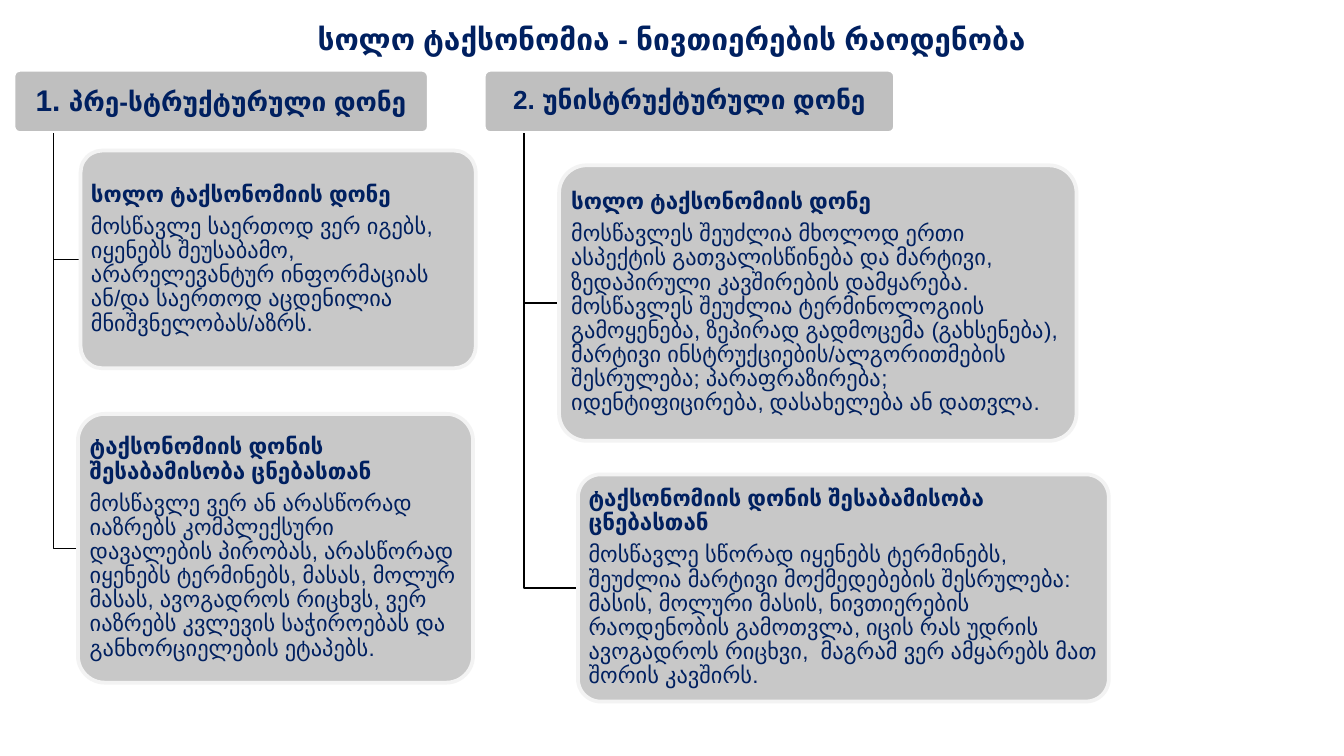
from dataclasses import dataclass

from lxml import etree
from pptx import Presentation
from pptx.dml.color import RGBColor
from pptx.enum import shapes, text
from pptx.oxml.ns import qn
from pptx.util import Inches, Pt

COLORS = {
    "text": "002060",
    "header": "BFBFBF",
    "header_line": "FFFFFF",
    "card": "C3C3C3",
    "card_line": "F3F3F3",
    "branch": "000000",
}
FONT = "Arial"
SLIDE_WIDTH = 10
HEADER_TOP, HEADER_HEIGHT = 0.52, 0.47
TRUNK_INDENT = 0.3
LEVEL = "სოლო ტაქსონომიის დონე"
MATCH = "ტაქსონომიის დონის შესაბამისობა ცნებასთან"


@dataclass
class Span:
    text: str
    size: int
    bold: bool = True


@dataclass
class Card:
    left: float
    top: float
    width: float
    height: float
    heading: str
    body: str


@dataclass
class Column:
    left: float
    width: float
    title: list[Span]
    cards: list[Card]


COLUMNS = [
    Column(0.1, 3.09, [Span("1. ", 16), Span("პრე-სტრუქტურული დონე", 14)], [
        Card(0.6, 1.12, 2.94, 1.62, LEVEL,
             "მოსწავლე საერთოდ ვერ იგებს, იყენებს შეუსაბამო, არარელევანტურ "
             "ინფორმაციას ან/და საერთოდ აცდენილია მნიშვნელობას/აზრს."),
        Card(0.58, 3.08, 2.94, 2, MATCH,
             "მოსწავლე ვერ ან არასწორად იაზრებს კომპლექსური დავალების პირობას, "
             "არასწორად იყენებს ტერმინებს, მასას, მოლურ მასას, ავოგადროს რიცხვს, "
             "ვერ იაზრებს კვლევის საჭიროებას და განხორციელების ეტაპებს."),
    ]),
    Column(3.6, 3.06, [Span("2. უნისტრუქტურული დონე", 14)], [
        Card(4.16, 1.23, 3.85, 2.05, LEVEL,
             "მოსწავლეს შეუძლია მხოლოდ ერთი ასპექტის გათვალისწინება და მარტივი, "
             "ზედაპირული კავშირების დამყარება. მოსწავლეს შეუძლია ტერმინოლოგიის "
             "გამოყენება, ზეპირად გადმოცემა (გახსენება), მარტივი "
             "ინსტრუქციების/ალგორითმების შესრულება; პარაფრაზირება; "
             "იდენტიფიცირება, დასახელება ან დათვლა."),
        Card(4.3, 3.53, 3.95, 1.69, MATCH,
             "მოსწავლე სწორად იყენებს ტერმინებს, შეუძლია მარტივი მოქმედებების "
             "შესრულება: მასის, მოლური მასის, ნივთიერების რაოდენობის გამოთვლა, "
             "იცის რას უდრის ავოგადროს რიცხვი,  მაგრამ ვერ ამყარებს მათ შორის "
             "კავშირს."),
    ]),
]


def color(name: str) -> RGBColor:
    return RGBColor.from_string(COLORS[name])


def add_spans(paragraph, spans: list[Span]) -> None:
    for span in spans:
        run = paragraph.add_run()
        run.text = span.text
        run.font.name = FONT
        run.font.size = Pt(span.size)
        run.font.bold = span.bold
        run.font.color.rgb = color("text")


def add_title(slide, wording: str) -> None:
    title = slide.shapes.title
    title.left, title.top = Inches(1.71), Inches(0.1)
    title.width, title.height = Inches(6.58), Inches(0.42)
    frame = title.text_frame
    frame.auto_size = text.MSO_AUTO_SIZE.NONE
    frame.vertical_anchor = text.MSO_ANCHOR.BOTTOM
    frame.margin_left = frame.margin_right = Inches(0.1)
    frame.margin_top = frame.margin_bottom = Inches(0.1)
    frame.paragraphs[0].alignment = text.PP_ALIGN.CENTER
    add_spans(frame.paragraphs[0], [Span(wording, 16)])


def add_panel(slide, left: float, top: float, width: float, height: float,
              style: str, alignment, lines: list[list[Span]]):
    """Add a rounded box with one paragraph per list of spans."""
    panel = slide.shapes.add_shape(
        shapes.MSO_SHAPE.ROUNDED_RECTANGLE,
        Inches(left), Inches(top), Inches(width), Inches(height))
    panel.adjustments[0] = 0.1
    panel.shadow.inherit = False
    panel.fill.solid()
    panel.fill.fore_color.rgb = color(style)
    panel.line.color.rgb = color(f"{style}_line")
    panel.line.width = Pt(2)
    frame = panel.text_frame
    frame.word_wrap = True
    frame.vertical_anchor = text.MSO_ANCHOR.MIDDLE
    frame.margin_left = frame.margin_right = Inches(0.03)
    frame.margin_top = frame.margin_bottom = Inches(0.02)
    for index, spans in enumerate(lines):
        paragraph = frame.add_paragraph() if index else frame.paragraphs[0]
        paragraph.alignment = alignment
        paragraph.line_spacing = 0.9
        paragraph.space_after = Pt(4.2)
        add_spans(paragraph, spans)
    return panel


def set_opacity(shape, percent: int) -> None:
    fill_color = shape.fill._xPr.find(qn("a:solidFill"))[0]
    etree.SubElement(fill_color, qn("a:alpha"), val=str(percent * 1000))


def add_branch(slide, trunk: float, card: Card) -> None:
    """Draw the elbow from the header down to the middle of the card's left side."""
    middle = Inches(card.top + card.height / 2)
    builder = slide.shapes.build_freeform(
        Inches(trunk), Inches(HEADER_TOP + HEADER_HEIGHT))
    builder.add_line_segments(
        [(Inches(trunk), middle), (Inches(card.left), middle)], close=False)
    branch = builder.convert_to_shape()
    branch.shadow.inherit = False
    branch.fill.background()
    branch.line.color.rgb = color("branch")
    branch.line.width = Pt(0.75)


def add_column(slide, column: Column) -> None:
    add_panel(slide, column.left, HEADER_TOP, column.width, HEADER_HEIGHT,
              "header", text.PP_ALIGN.CENTER, [column.title])
    for card in column.cards:
        add_branch(slide, column.left + TRUNK_INDENT, card)
        panel = add_panel(
            slide, card.left, card.top, card.width, card.height,
            "card", text.PP_ALIGN.LEFT,
            [[Span(card.heading, 12)], [Span(card.body, 12, bold=False)]])
        set_opacity(panel, 90)


def main() -> None:
    presentation = Presentation()
    presentation.slide_width = Inches(SLIDE_WIDTH)
    presentation.slide_height = Inches(SLIDE_WIDTH * 9 / 16)
    slide = presentation.slides.add_slide(presentation.slide_layouts[5])
    add_title(slide, "სოლო ტაქსონომია - ნივთიერების რაოდენობა")
    for column in COLUMNS:
        add_column(slide, column)
    presentation.save("out.pptx")


if __name__ == "__main__":
    main()
